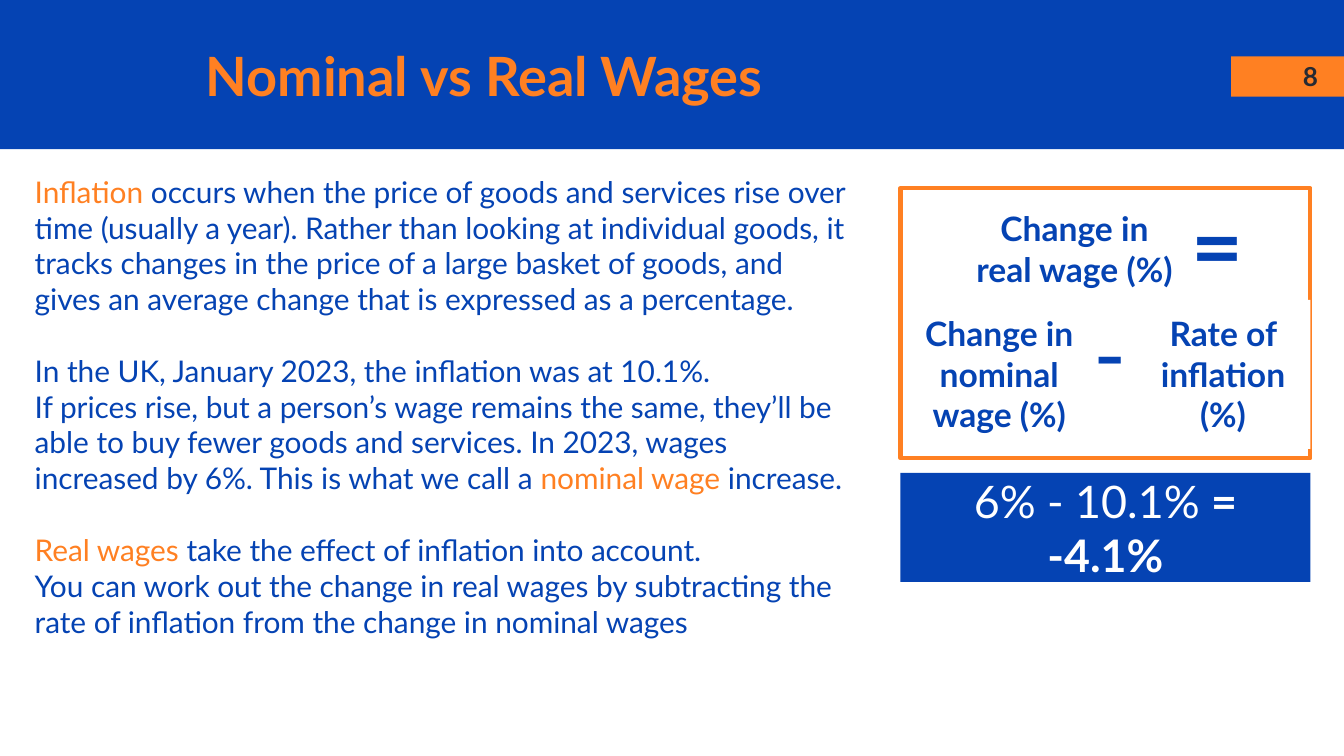
import pptx
import pptx.dml.color
import pptx.enum.shapes
import pptx.enum.text
import pptx.util

Pt = pptx.util.Pt
ALIGN = pptx.enum.text.PP_ALIGN
ANCHOR = pptx.enum.text.MSO_ANCHOR
BLUE, ORANGE, WHITE, DARK = "0543B3", "FF8022", "FFFFFF", "262A33"

# Each paragraph: space before, then its (text, format) runs
BODY = [
    (0, [("Inflation ", {"color": ORANGE}),
         ("occurs when the price of goods and services rise over time (usually a year). "
          "Rather than looking at individual goods, it tracks changes in the price of a "
          "large basket of goods, and gives an average change that is expressed as a "
          "percentage.", {})]),
    (19.2, [("In the UK, January 2023, the inflation was at 10.1%.", {})]),
    (0, [("If prices rise, but a person’s wage remains the same, they’ll be able to buy "
          "fewer goods and services. In 2023, wages increased by 6%. This is what we "
          "call a ", {}),
         ("nominal wage ", {"color": ORANGE}),
         ("increase.", {})]),
    (19.2, [("Real wages ", {"color": ORANGE}),
            ("take the effect of inflation into account.", {})]),
    (0, [("You can work out the change in real wages by subtracting the rate of "
          "inflation from the change in nominal wages", {})]),
]


def rgb(color):
    return pptx.dml.color.RGBColor.from_string(color)


def add_run(p, text, size=16, color=BLUE, bold=False):
    r = p.add_run()
    r.text = text
    r.font.name = "Lato"
    r.font.size = Pt(size)
    r.font.bold = bold
    r.font.color.rgb = rgb(color)


class Deck:
    """Holds the style and the current slide."""
    inset = 7.2

    def __init__(self):
        self.prs = pptx.Presentation()
        self.prs.slide_width, self.prs.slide_height = Pt(720), Pt(405)
        self.s = self.prs.slides.add_slide(self.prs.slide_layouts[5])

    def frame(self, sp, anchor):
        tf = sp.text_frame
        tf.word_wrap = True
        tf.auto_size = pptx.enum.text.MSO_AUTO_SIZE.NONE
        tf.vertical_anchor = anchor
        tf.margin_left = tf.margin_right = Pt(self.inset)
        tf.margin_top = tf.margin_bottom = Pt(self.inset)
        return tf

    def title(self, text, box, **fmt):
        sp = self.s.shapes.title
        sp.left, sp.top, sp.width, sp.height = map(Pt, box)
        self.s.shapes._spTree.append(sp._element)  # in front of the banner
        p = self.frame(sp, ANCHOR.MIDDLE).paragraphs[0]
        p.alignment = ALIGN.LEFT
        add_run(p, text, **fmt)

    def rect(self, box, fill=None, line=None, runs=(), anchor=ANCHOR.TOP):
        sp = self.s.shapes.add_shape(
            pptx.enum.shapes.MSO_SHAPE.RECTANGLE, *map(Pt, box))
        sp.shadow.inherit = False
        if fill:
            sp.fill.solid()
            sp.fill.fore_color.rgb = rgb(fill)
        else:
            sp.fill.background()
        if line:
            sp.line.color.rgb = rgb(line)
            sp.line.width = Pt(2.25)
        else:
            sp.line.fill.background()
        if runs:
            p = self.frame(sp, anchor).paragraphs[0]
            p.alignment = ALIGN.CENTER
            for text, fmt in runs:
                add_run(p, text, **fmt)

    def text(self, box, paragraphs, anchor=ANCHOR.TOP, align=ALIGN.LEFT):
        tf = self.frame(self.s.shapes.add_textbox(*map(Pt, box)), anchor)
        for i, (before, runs) in enumerate(paragraphs):
            p = tf.add_paragraph() if i else tf.paragraphs[0]
            p.alignment = align
            if before:
                p.space_before = Pt(before)
            for text, fmt in runs:
                add_run(p, text, **fmt)


def main():
    deck = Deck()
    deck.rect((0, 0, 720, 80), BLUE)
    deck.rect((659.5, 30.2, 60.5, 21.6), ORANGE)
    deck.text((683.3, 31.7, 37.4, 18),
              [(0, [("8", {"size": 14, "color": DARK, "bold": True})])],
              ANCHOR.MIDDLE, ALIGN.CENTER)
    deck.title("Nominal vs Real Wages", (103, 20.2, 524.2, 40.3),
               size=29, color=ORANGE, bold=True)
    deck.text((11.5, 85.7, 452.2, 266.4), BODY)

    # Formula: the frame lies between the terms
    label = {"size": 18, "bold": True}
    left, width = 482.4, 219.6
    deck.rect((631.4, 94.3, 31.7, 72.7), WHITE, runs=[("=", {"size": 48, "bold": True})])
    deck.rect((483.1, 160.6, 104.4, 79.9), WHITE,
              runs=[("Change in nominal wage (%)", label)])
    deck.rect((left, 100.8, width, 144.7), line=ORANGE)
    deck.rect((608.4, 160.6, 93.6, 79.9), WHITE, runs=[("Rate of inflation (%)", label)])
    deck.rect((578.9, 152.6, 31.7, 72.7), WHITE, runs=[("-", {"size": 48})])
    deck.rect((512.6, 104.4, 126, 58.3), WHITE, runs=[("Change in real wage (%)", label)])

    result = {"size": 24, "color": WHITE}
    deck.rect((left, 253.4, width, 58.3), BLUE, anchor=ANCHOR.MIDDLE,
              runs=[("6% - 10.1% ", result), ("= -4.1%", {**result, "bold": True})])
    deck.prs.save("out.pptx")


if __name__ == "__main__":
    main()
